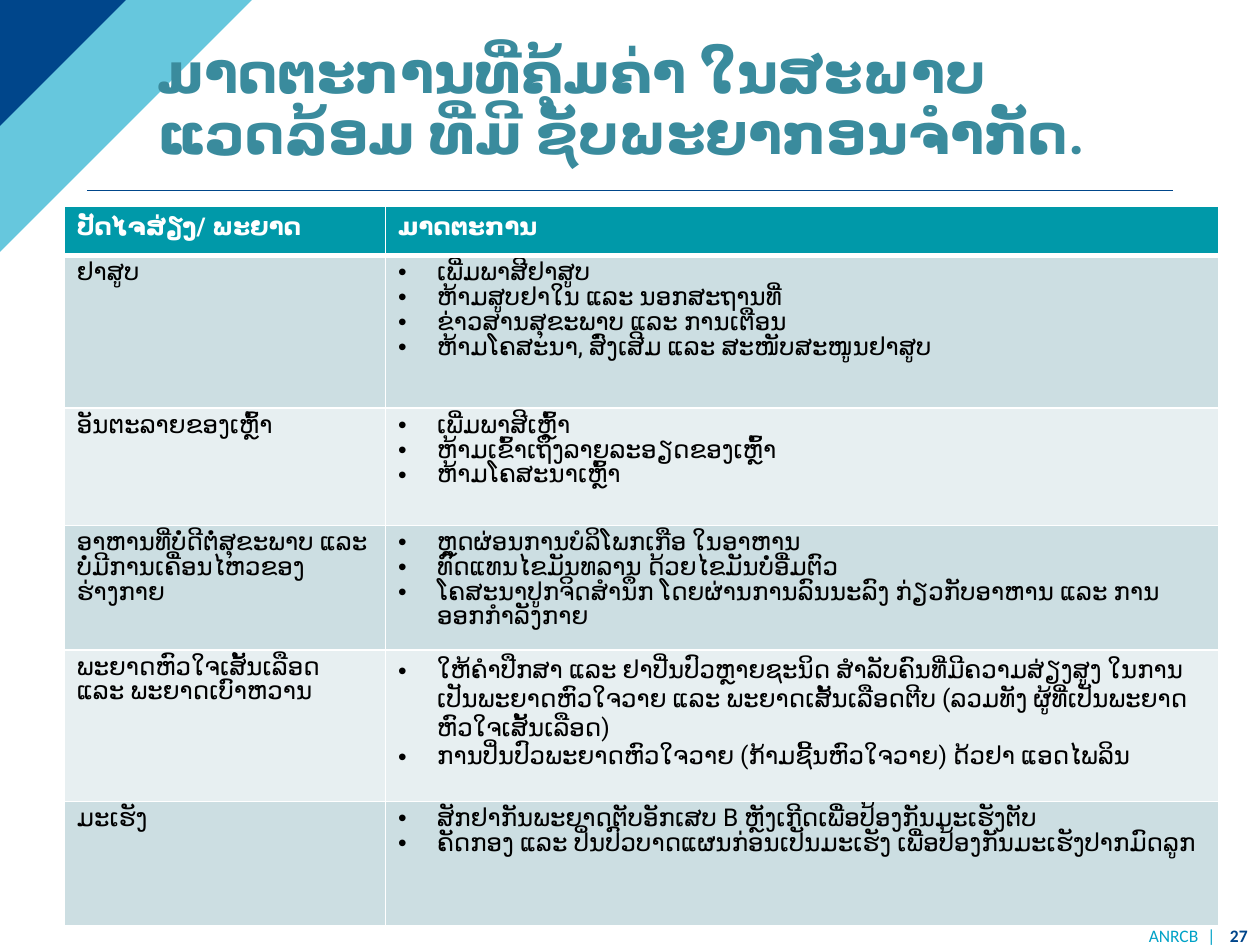
from lxml import etree
from pptx import Presentation
from pptx.dml.color import RGBColor
from pptx.enum.shapes import MSO_CONNECTOR
from pptx.enum.text import MSO_ANCHOR, PP_ALIGN
from pptx.oxml.ns import qn
from pptx.util import Inches, Pt

STRAIGHT = MSO_CONNECTOR.STRAIGHT
MIDDLE, BOTTOM = MSO_ANCHOR.MIDDLE, MSO_ANCHOR.BOTTOM
RIGHT = PP_ALIGN.RIGHT

FONT = "Roboto"
NAVY, CYAN, TEAL, WHITE, BLACK = "00468B", "00A2C7", "0099A9", "FFFFFF", "000000"
BANDS = ["CCDEE2", "E7EFF1"]
COLUMNS = [2.55, 6.61]
ROWS = [0.39, 1.21, 0.93, 0.99, 1.2, 0.99]
TIGHT = Pt(14.2)

TITLE = "ມາດຕະການທີ່ຄຸ້ມຄ່າ ໃນສະພາບແວດລ້ອມ ທີ່ມີ ຊັບພະຍາກອນຈຳກັດ."
HEADER = ["ປັດໄຈສ່ຽງ/ ພະຍາດ", "ມາດຕະການ"]
# Risk factor, line spacing of its measures, measures
MEASURES = [
    ("ຢາສູບ", TIGHT, [
        "ເພີ່ມພາສີຢາສູບ",
        "ຫ້າມສູບຢາໃນ ແລະ ນອກສະຖານທີ່",
        "ຂ່າວສານສຸຂະພາບ ແລະ ການເຕືອນ",
        "ຫ້າມໂຄສະນາ, ສົ່ງເສີມ ແລະ ສະໜັບສະໜູນຢາສູບ"]),
    ("ອັນຕະລາຍຂອງເຫຼົ້າ", TIGHT, [
        "ເພີ່ມພາສີເຫຼົ້າ",
        "ຫ້າມເຂົ້າເຖິງລາຍລະອຽດຂອງເຫຼົ້າ",
        "ຫ້າມໂຄສະນາເຫຼົ້າ"]),
    ("ອາຫານທີ່ບໍ່ດີຕໍ່ສຸຂະພາບ ແລະ ບໍ່ມີການເຄື່ອນໄຫວຂອງຮ່າງກາຍ", TIGHT, [
        "ຫຼຸດຜ່ອນການບໍລິໂພກເກືອ ໃນອາຫານ",
        "ທົດແທນໄຂມັນທລານ ດ້ວຍໄຂມັນບໍ່ອື່ມຕົວ",
        "ໂຄສະນາປູກຈິດສໍານຶກ ໂດຍຜ່ານການລົນນະລົງ ກ່ຽວກັບອາຫານ ແລະ ການອອກກໍາລັງກາຍ"]),
    ("ພະຍາດຫົວໃຈເສັ້ນເລືອດ ແລະ ພະຍາດເບົາຫວານ", Pt(16.4), [
        "ໃຫ້ຄຳປືກສາ ແລະ ຢາປີ່ນປົວຫຼາຍຊະນິດ ສຳລັບຄົນທີ່ມີຄວາມສ່ຽງສູງ ໃນການເປັນພະຍາດຫົວໃຈວາຍ ແລະ "
        "ພະຍາດເສັ້ນເລືອດຕີບ (ລວມທັງ ຜູ້ທີ່ເປັນພະຍາດຫົວໃຈເສັ້ນເລືອດ)",
        "ການປິ່ນປົວພະຍາດຫົວໃຈວາຍ (ກ້າມຊີ້ນຫົວໃຈວາຍ) ດ້ວຢາ ແອດໄພລິນ"]),
    ("ມະເຮັງ", TIGHT, [
        "ສັກຢາກັນພະຍາດຕັບອັກເສບ B ຫຼັງເກີດເພື່ອປ້ອງກັນມະເຮັງຕັບ",
        "ຄັດກອງ ແລະ ປິ່ນປົວບາດແຜນກ່ອນເປັນມະເຮັງ ເພື່ອປ້ອງກັນມະເຮັງປາກມົດລູກ"]),
]


def rgb(color):
    return RGBColor.from_string(color)


def add_run(p, text, size, color, bold=False, font=FONT):
    r = p.add_run()
    r.text = text
    r.font.size, r.font.bold, r.font.name = Pt(size), bold, font
    r.font.color.rgb = rgb(color)
    etree.SubElement(r.font._element, qn("a:cs"), typeface=font)
    return r


def add_text_box(slide, left, top, width, height, anchor):
    """Add a wrapping text box and return its first paragraph."""
    sp = slide.shapes.add_textbox(Inches(left), Inches(top), Inches(width), Inches(height))
    tf = sp.text_frame
    tf.word_wrap = True
    tf.vertical_anchor = anchor
    return tf.paragraphs[0]


def add_corner(slide, width, height, color, opacity=100):
    """Add a right triangle that fills the top left corner."""
    builder = slide.shapes.build_freeform(0, 0, scale=Inches(1))
    builder.add_line_segments([(width, 0), (0, height)], close=True)
    sp = builder.convert_to_shape()
    sp.shadow.inherit = False
    sp.line.fill.background()
    sp.fill.solid()
    sp.fill.fore_color.rgb = rgb(color)
    if opacity < 100:
        clr = sp._element.spPr.find(".//" + qn("a:srgbClr"))
        etree.SubElement(clr, qn("a:alpha"), val=str(opacity * 1000))


def add_rule(slide, left, right, y):
    line = slide.shapes.add_connector(STRAIGHT, Inches(left), Inches(y), Inches(right), Inches(y))
    line.line.color.rgb = rgb(NAVY)
    line.line.width = Pt(0.75)
    etree.SubElement(line._element.spPr, qn("a:effectLst"))


def style_cell(cell, fill, top=1, bottom=1):
    """Give a cell white borders and a plain fill."""
    tcPr = cell._tc.get_or_add_tcPr()
    for side, width in (("L", 1), ("R", 1), ("T", top), ("B", bottom)):
        ln = etree.SubElement(tcPr, qn("a:ln" + side), w=str(Pt(width)))
        solid = etree.SubElement(ln, qn("a:solidFill"))
        etree.SubElement(solid, qn("a:srgbClr"), val=WHITE)
    cell.fill.solid()
    cell.fill.fore_color.rgb = rgb(fill)


def set_bullet(p):
    pPr = p._p.get_or_add_pPr()
    indent = Inches(0.31)
    pPr.set("marL", str(indent))
    pPr.set("indent", str(-indent))
    etree.SubElement(pPr, qn("a:buFont"), typeface="Arial")
    etree.SubElement(pPr, qn("a:buChar"), char="•")


def fill_list(cell, items, spacing):
    tf = cell.text_frame
    for i, item in enumerate(items):
        p = tf.add_paragraph() if i else tf.paragraphs[0]
        p.line_spacing = spacing
        set_bullet(p)
        add_run(p, item, 14, BLACK)


def add_measures_table(slide):
    frame = slide.shapes.add_table(len(ROWS), len(COLUMNS), Inches(0.51), Inches(1.64),
                                   Inches(sum(COLUMNS)), Inches(sum(ROWS)))
    table = frame.table
    table.horz_banding = False
    for column, width in zip(table.columns, COLUMNS):
        column.width = Inches(width)
    for row, height in zip(table.rows, ROWS):
        row.height = Inches(height)

    for col, text in enumerate(HEADER):
        cell = table.cell(0, col)
        style_cell(cell, TEAL, bottom=3)
        add_run(cell.text_frame.paragraphs[0], text, 14, WHITE, bold=True)

    for row, (factor, spacing, measures) in enumerate(MEASURES, start=1):
        factor_cell, list_cell = table.cell(row, 0), table.cell(row, 1)
        for cell in (factor_cell, list_cell):
            style_cell(cell, BANDS[(row - 1) % 2], top=3 if row == 1 else 1)
        p = factor_cell.text_frame.paragraphs[0]
        p.line_spacing = TIGHT
        add_run(p, factor, 14, BLACK)
        fill_list(list_cell, measures, spacing)


def add_footer(slide):
    p = add_text_box(slide, 8.35, 7.32, 1.65, 0.21, MIDDLE)
    p.alignment = RIGHT
    add_run(p, "ANRCB", 10, CYAN, font="Calibri")
    separator = add_run(p, " | ", 10, CYAN, font="Calibri")
    separator.font._element.set("spc", "300")
    add_run(p, "27", 10, NAVY, bold=True, font="Calibri")


def main():
    prs = Presentation()
    prs.slide_width, prs.slide_height = Inches(10), Inches(7.5)
    slide = prs.slides.add_slide(prs.slide_layouts[6])
    add_rule(slide, 0.69, 9.31, 1.51)
    add_corner(slide, 1.62, 1.64, CYAN, opacity=60)
    add_corner(slide, 1.37, 1.39, NAVY)
    title = add_text_box(slide, 1.15, 0.26, 8.25, 1.11, BOTTOM)
    title.line_spacing = 0.9
    add_run(title, TITLE, 32, "3A8B9D", bold=True)
    add_measures_table(slide)
    add_footer(slide)
    prs.save("out.pptx")


if __name__ == "__main__":
    main()
